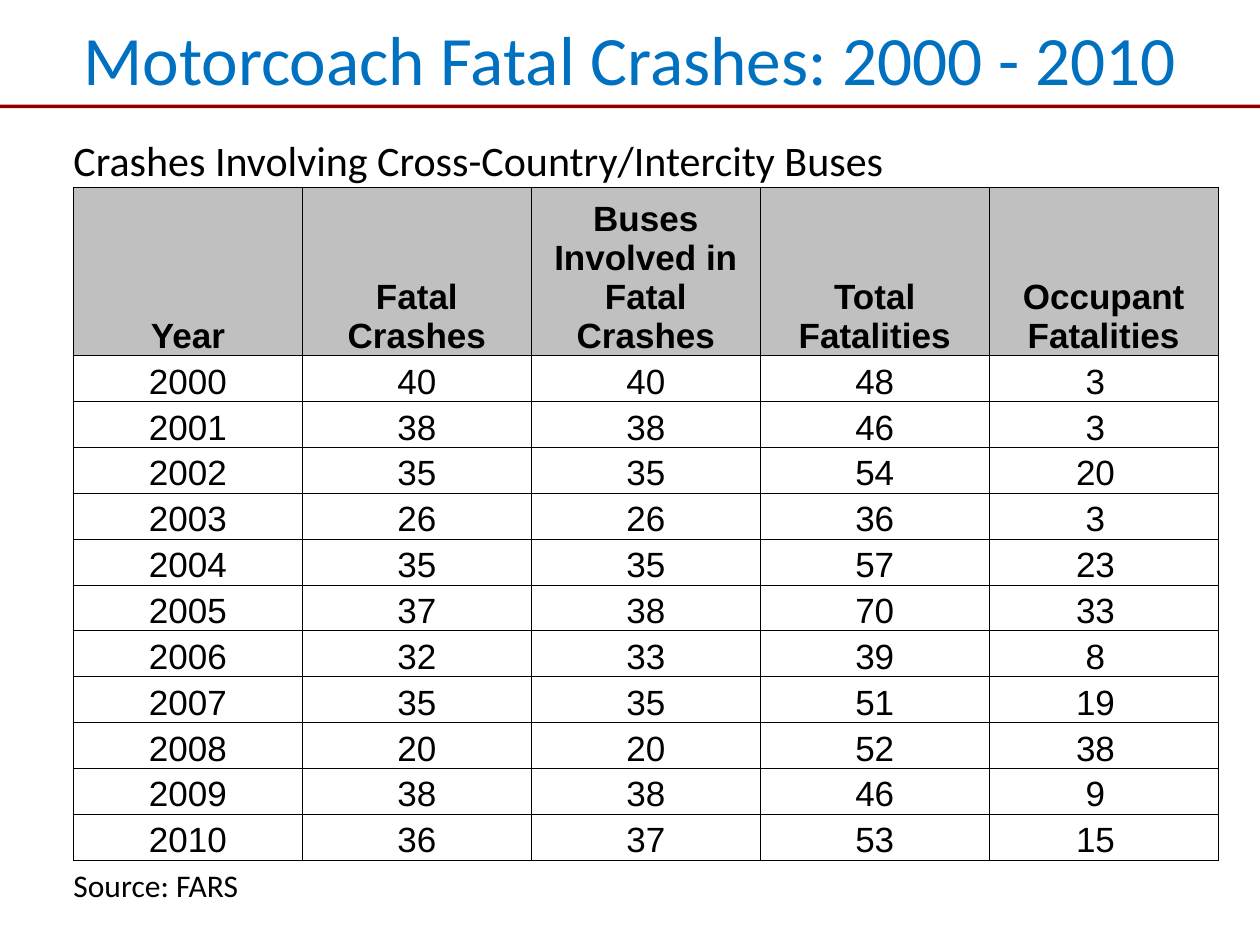
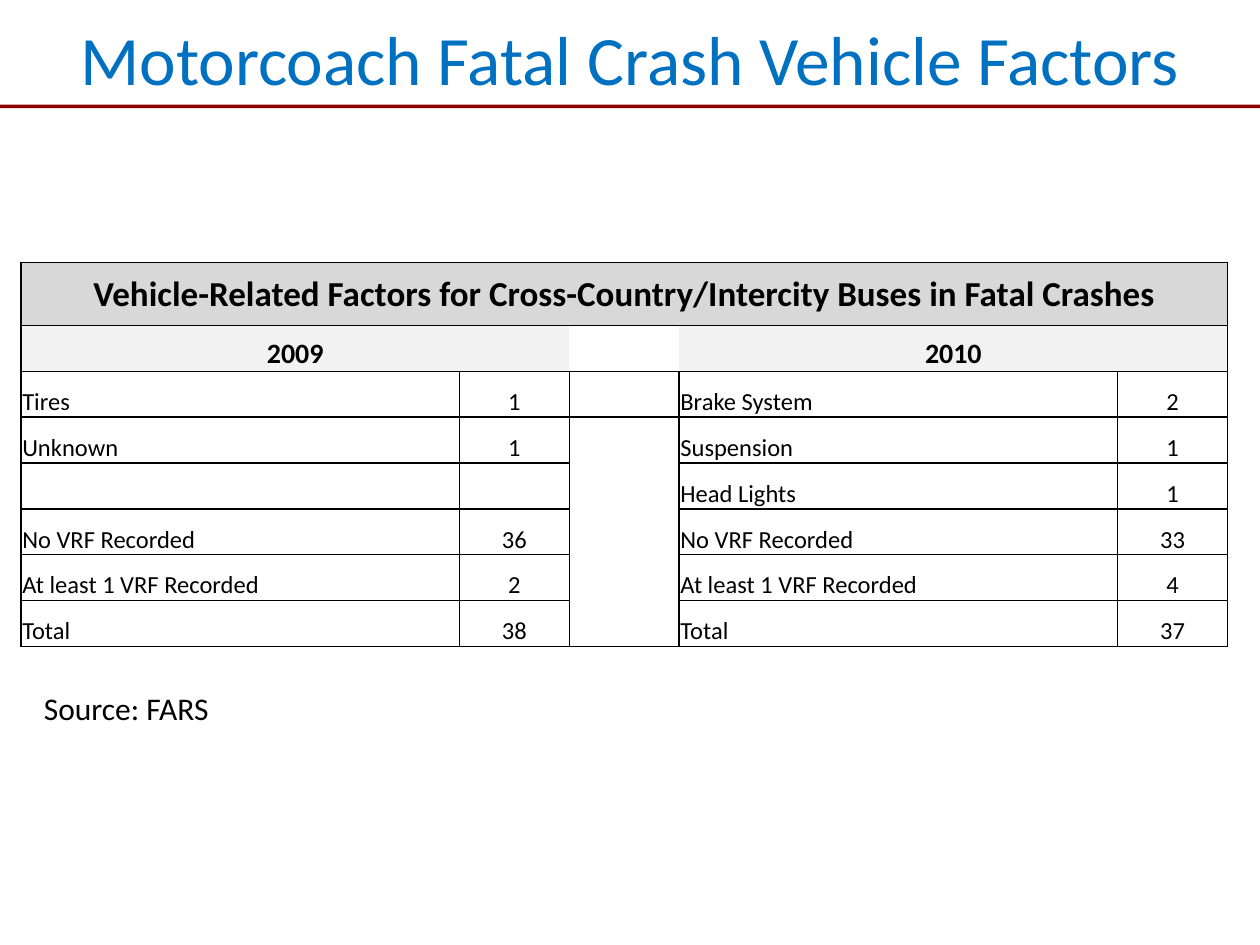
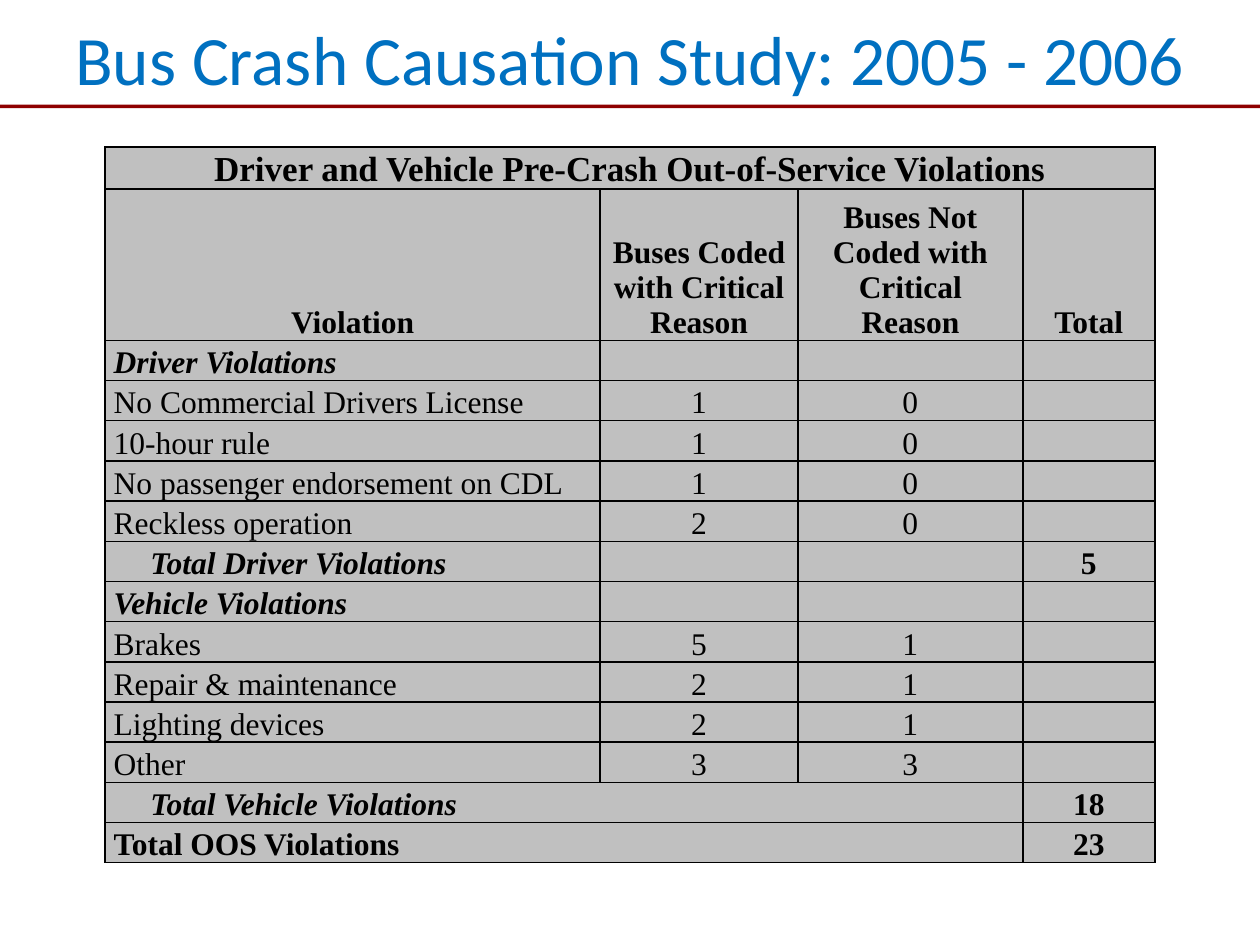
"""Build three slides of bus crash tables."""
from dataclasses import dataclass
from functools import partial

from lxml.etree import SubElement
from pptx import Presentation
from pptx.dml.color import RGBColor
from pptx.enum.shapes import MSO_SHAPE as Preset
from pptx.enum.text import MSO_ANCHOR as Anchor, PP_ALIGN as Align
from pptx.oxml.ns import qn
from pptx.util import Emu, Inches, Pt

COLORS = {
    "title": "0070C0",
    "band": "8E0000",
    "text": "000000",
    "silver": "C0C0C0",
    "heading": "D8D8D8",
    "year": "F2F2F2",
}
SLIDE_WIDTH, SLIDE_HEIGHT = Inches(10), Inches(7.5)
GRID_COLUMNS, GRID_ROWS = 100, 75
PLAIN_TABLE_STYLE = "{2D5ABB26-0587-4C30-8999-92F81FD0307C}"
EDGE_TAGS = {"l": "a:lnL", "r": "a:lnR", "t": "a:lnT", "b": "a:lnB"}


@dataclass(frozen=True)
class Box:
    """A rectangle in grid columns and rows."""
    left: float
    top: float
    width: float
    height: float

    def emu(self) -> tuple[Emu, Emu, Emu, Emu]:
        """Return the rectangle as slide lengths."""
        return across(self.left), down(self.top), across(self.width), down(self.height)


@dataclass(frozen=True)
class CellSpec:
    """Content and look of one table cell and the columns it spans."""
    text: str = ""
    align: Align = Align.CENTER
    font: str = "Calibri"
    size: float = 18
    bold: bool = False
    italic: bool = False
    indent: float = 0
    fill: str | None = None
    span: int = 1
    edges: str = "lrtb"
    anchor: Anchor = Anchor.BOTTOM
    extra_right: float = 0


@dataclass(frozen=True)
class TableSpec:
    """Place, grid and cells of one table."""
    left: float
    top: float
    columns: list[float]
    rows: list[float]
    cells: list[list[CellSpec]]
    margins: tuple[float, float, float]
    line_width: float


def across(columns: float) -> Emu:
    """Convert grid columns to a length."""
    return Emu(round(SLIDE_WIDTH * columns / GRID_COLUMNS))


def down(rows: float) -> Emu:
    """Convert grid rows to a length."""
    return Emu(round(SLIDE_HEIGHT * rows / GRID_ROWS))


def rgb(name: str) -> RGBColor:
    """Return a named colour."""
    return RGBColor.from_string(COLORS[name])


def write_text(frame, text: str, *, font: str = "Calibri", size: float = 18,
               color: str = "text", bold: bool = False, italic: bool = False,
               align: Align = Align.LEFT, indent: float = 0) -> None:
    """Write one formatted paragraph into a text frame."""
    frame.word_wrap = True
    paragraph = frame.paragraphs[0]
    paragraph.alignment = align
    if indent:
        paragraph._p.get_or_add_pPr().set("indent", str(across(indent)))
    run = paragraph.add_run()
    run.text = text
    run.font.name, run.font.size = font, Pt(size)
    run.font.bold, run.font.italic = bold, italic
    run.font.color.rgb = rgb(color)


def add_text(slide, box: Box, text: str, anchor: Anchor = Anchor.TOP, **style) -> None:
    """Add a text box."""
    frame = slide.shapes.add_textbox(*box.emu()).text_frame
    frame.vertical_anchor = anchor
    write_text(frame, text, **style)


def add_titled_slide(presentation, title: str, margin: float = 2.5):
    """Add a blank slide with the shared band and title."""
    slide = presentation.slides.add_slide(presentation.slide_layouts[6])
    band = slide.shapes.add_shape(Preset.RECTANGLE, *Box(0, 8.3, GRID_COLUMNS, 0.3).emu())
    band.shadow.inherit = False
    band.fill.solid()
    band.fill.fore_color.rgb = rgb("band")
    band.line.fill.background()
    add_text(slide, Box(margin, 0, GRID_COLUMNS - 2 * margin, 9.2), title, Anchor.MIDDLE,
             size=39.6, color="title", align=Align.CENTER)
    return slide


def draw_edges(cell, edges: str, width: float) -> None:
    """Draw the chosen sides of a cell."""
    properties = cell._tc.get_or_add_tcPr()
    for edge, tag in EDGE_TAGS.items():
        if edge in edges:
            line = SubElement(properties, qn(tag), w=str(Pt(width)))
            fill = SubElement(line, qn("a:solidFill"))
            SubElement(fill, qn("a:srgbClr"), val=COLORS["text"])


def format_cell(cell, look: CellSpec, edges: str, table: TableSpec) -> None:
    """Set margins, edges and fill of a cell."""
    side, top, bottom = table.margins
    cell.margin_left, cell.margin_right = across(side), across(side + look.extra_right)
    cell.margin_top, cell.margin_bottom = down(top), down(bottom)
    cell.vertical_anchor = look.anchor
    draw_edges(cell, edges, table.line_width)
    if look.fill:
        cell.fill.solid()
        cell.fill.fore_color.rgb = rgb(look.fill)
    else:
        cell.fill.background()


def add_table(slide, spec: TableSpec) -> None:
    """Add a table with its cells."""
    box = Box(spec.left, spec.top, sum(spec.columns), sum(spec.rows))
    table = slide.shapes.add_table(len(spec.rows), len(spec.columns), *box.emu()).table
    table.first_row = table.horz_banding = False
    table._tbl.tblPr.find(qn("a:tableStyleId")).text = PLAIN_TABLE_STYLE
    for column, width in zip(table.columns, spec.columns):
        column.width = across(width)
    for row, height in zip(table.rows, spec.rows):
        row.height = down(height)
    for row_index, looks in enumerate(spec.cells):
        start = 0
        for look in looks:
            last = start + look.span - 1
            origin = table.cell(row_index, start)
            format_cell(origin, look, look.edges, spec)
            for index in range(start + 1, last + 1):
                hidden = "l" if index == last else "lr"
                edges = "".join(edge for edge in look.edges if edge not in hidden)
                format_cell(table.cell(row_index, index), look, edges, spec)
            if look.span > 1:
                origin.merge(table.cell(row_index, last))
            if look.text:
                write_text(origin.text_frame, look.text, font=look.font, size=look.size,
                           bold=look.bold, italic=look.italic, align=look.align,
                           indent=look.indent)
            start = last + 1


def build_yearly_crashes(presentation) -> None:
    """Add the slide of crashes by year."""
    headings = ["Year", "Fatal Crashes", "Buses Involved in Fatal Crashes",
                "Total Fatalities", "Occupant Fatalities"]
    crashes = [
        (2000, 40, 40, 48, 3), (2001, 38, 38, 46, 3), (2002, 35, 35, 54, 20),
        (2003, 26, 26, 36, 3), (2004, 35, 35, 57, 23), (2005, 37, 38, 70, 33),
        (2006, 32, 33, 39, 8), (2007, 35, 35, 51, 19), (2008, 20, 20, 52, 38),
        (2009, 38, 38, 46, 9), (2010, 36, 37, 53, 15),
    ]
    arial = partial(CellSpec, font="Arial", size=20)
    cells = [
        [CellSpec("Crashes Involving Cross-Country/Intercity Buses", Align.LEFT,
                  size=24, span=5, edges="b")],
        [arial(heading, bold=True, fill="silver") for heading in headings],
    ]
    for *counts, occupants in crashes:
        cells.append([arial(str(count)) for count in counts]
                     + [arial(str(occupants), extra_right=1.3)])
    cells.append([CellSpec("Source: FARS", Align.LEFT, span=2, edges="t")]
                 + [CellSpec(edges="t")] * 3)
    slide = add_titled_slide(presentation, "Motorcoach Fatal Crashes: 2000 - 2010", 5)
    add_table(slide, TableSpec(5.83, 10.83, [18.17] * 5, [4.07, 12.4] + [3.64] * 12,
                               cells, (0, 0, 0), 0.5))


def build_vehicle_factors(presentation) -> None:
    """Add the slide of vehicle factors in two years."""
    factors = [
        ("Tires", "1", "Brake System", "2"),
        ("Unknown", "1", "Suspension", "1"),
        ("", "", "Head Lights", "1"),
        ("No VRF Recorded", "36", "No VRF Recorded", "33"),
        ("At least 1 VRF Recorded", "2", "At least 1 VRF Recorded", "4"),
        ("Total", "38", "Total", "37"),
    ]
    year = partial(CellSpec, size=16, bold=True, fill="year", span=2)
    label = partial(CellSpec, align=Align.LEFT, size=14)
    count = partial(CellSpec, size=14)
    cells = [
        [CellSpec("Vehicle-Related Factors for Cross-Country/Intercity Buses in Fatal Crashes",
                  size=20, bold=True, fill="heading", span=5, anchor=Anchor.MIDDLE)],
        [year("2009", edges="ltb"), CellSpec(edges="tb"), year("2010", edges="rtb")],
    ]
    gap_edges = ["lrt"] + ["lr"] * (len(factors) - 2) + ["lrb"]
    for (left, left_count, right, right_count), edges in zip(factors, gap_edges):
        cells.append([label(left), count(left_count), CellSpec(edges=edges),
                      label(right), count(right_count)])
    slide = add_titled_slide(presentation, "Motorcoach Fatal Crash Vehicle Factors")
    add_table(slide, TableSpec(1.67, 20.83, [34.8, 8.72, 8.72, 34.8, 8.72],
                               [5] + [3.64] * 7, cells, (0.1, 0.1, 0), 1))
    add_text(slide, Box(2.5, 54.2, 18.3, 4), "Source: FARS")


def build_violations(presentation) -> None:
    """Add the slide of out-of-service violations."""
    driver = [("No Commercial Drivers License", 1, 0), ("10-hour rule", 1, 0),
              ("No passenger endorsement on CDL", 1, 0), ("Reckless operation", 2, 0)]
    vehicle = [("Brakes", 5, 1), ("Repair & maintenance", 2, 1),
               ("Lighting devices", 2, 1), ("Other", 3, 3)]
    serif = partial(CellSpec, font="Times New Roman", fill="silver")
    strong = partial(serif, bold=True)
    label = partial(serif, align=Align.LEFT)
    section = partial(label, bold=True, italic=True)
    subtotal = partial(section, indent=2.9)
    blank = serif()

    def violation_rows(violations: list[tuple[str, int, int]]) -> list[list[CellSpec]]:
        """Return one row for each violation."""
        return [[label(name), serif(str(coded)), serif(str(uncoded)), blank]
                for name, coded, uncoded in violations]

    headings = ["Violation", "Buses Coded with Critical Reason",
                "Buses Not Coded with Critical Reason", "Total"]
    cells = [
        [strong("Driver and Vehicle Pre-Crash Out-of-Service Violations", size=20, span=4)],
        [strong(heading) for heading in headings],
        [section("Driver Violations"), blank, blank, blank],
        *violation_rows(driver),
        [subtotal("Total Driver Violations"), blank, blank, strong("5")],
        [section("Vehicle Violations"), blank, blank, blank],
        *violation_rows(vehicle),
        [subtotal("Total Vehicle Violations", span=3), strong("18")],
        [label("Total OOS Violations", bold=True, span=3), strong("23")],
    ]
    slide = add_titled_slide(presentation, "Bus Crash Causation Study: 2005 - 2006")
    add_table(slide, TableSpec(8.33, 11.67, [39.3, 15.7, 17.85, 10.48],
                               [3.19, 11.06] + [3.19] * 13, cells, (0.7, 0, 0), 1))


def main() -> None:
    """Build and save the presentation."""
    presentation = Presentation()
    presentation.slide_width, presentation.slide_height = SLIDE_WIDTH, SLIDE_HEIGHT
    build_yearly_crashes(presentation)
    build_vehicle_factors(presentation)
    build_violations(presentation)
    presentation.save("out.pptx")


if __name__ == "__main__":
    main()
